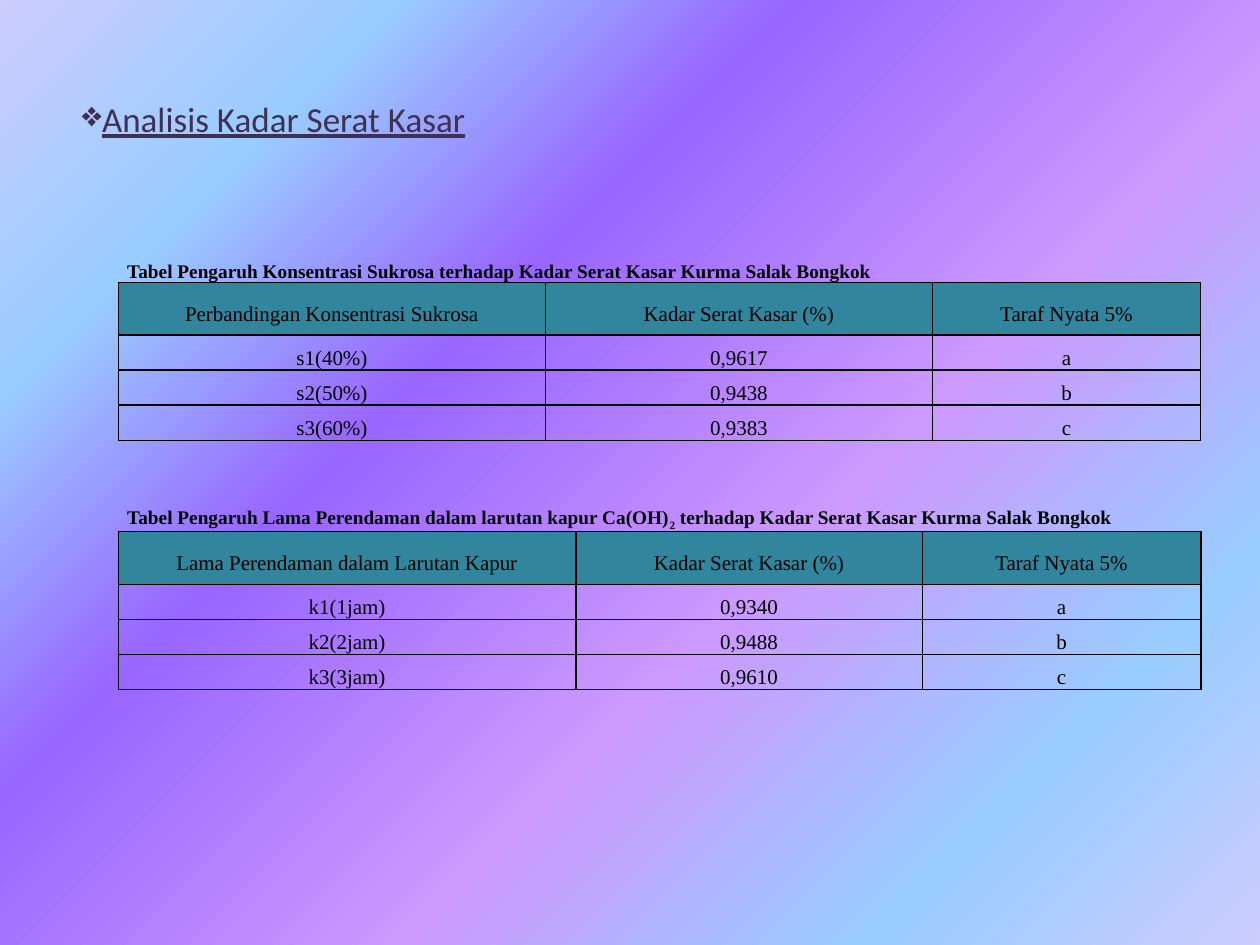
from lxml.etree import SubElement
from pptx import Presentation
from pptx.dml.color import RGBColor
from pptx.enum.text import MSO_ANCHOR, PP_ALIGN
from pptx.oxml import parse_xml
from pptx.oxml.ns import nsdecls, qn
from pptx.util import Inches, Pt

BLACK = RGBColor(0x00, 0x00, 0x00)
PLUM = RGBColor(0x40, 0x31, 0x52)
TEAL = RGBColor(0x31, 0x85, 0x9C)
STOPS = [(0, "CCCCFF"), (18, "99CCFF"), (36, "9966FF"),
         (61, "CC99FF"), (82, "99CCFF"), (100, "CCCCFF")]

SUGAR = {
    "top": 1.9,
    "widths": [3.39, 3.07, 2.13],
    "caption": [("Tabel Pengaruh Konsentrasi Sukrosa terhadap "
                 "Kadar Serat Kasar Kurma Salak Bongkok", 0)],
    "rows": [("Perbandingan Konsentrasi Sukrosa", "Kadar Serat Kasar (%)", "Taraf Nyata 5%"),
             ("s1(40%)", "0,9617", "a"),
             ("s2(50%)", "0,9438", "b"),
             ("s3(60%)", "0,9383", "c")],
}
SOAK = {
    "top": 3.83,
    "widths": [3.63, 2.75, 2.21],
    "caption": [("Tabel Pengaruh Lama Perendaman dalam larutan kapur Ca(OH)", 0),
                ("2", -25000),
                (" terhadap Kadar Serat Kasar Kurma Salak Bongkok", 0)],
    "rows": [("Lama Perendaman dalam Larutan Kapur", "Kadar Serat Kasar (%)", "Taraf Nyata 5%"),
             ("k1(1jam)", "0,9340", "a"),
             ("k2(2jam)", "0,9488", "b"),
             ("k3(3jam)", "0,9610", "c")],
}


def paint(slide):
    """Diagonal gradient background."""
    fill = slide.background.fill
    fill.gradient()
    fill.gradient_angle = 315  # counter-clockwise, so 45 degrees downwards
    grad = slide.background._cSld.find(".//" + qn("a:gsLst"))
    for stop in list(grad):
        grad.remove(stop)
    for pos, color in STOPS:
        grad.append(parse_xml(f'<a:gs {nsdecls("a")} pos="{pos * 1000}">'
                              f'<a:srgbClr val="{color}"/></a:gs>'))


def style(run, color=BLACK, **format):
    run.font.color.rgb = color
    for name, value in format.items():
        setattr(run.font, name, value)


def add_title(slide, text):
    title = slide.shapes.title
    place = {"left": 0.55, "top": 0.63, "width": 8.5, "height": 0.62}
    for name, value in place.items():
        setattr(title, name, Inches(value))
    title.text_frame.vertical_anchor = MSO_ANCHOR.MIDDLE
    para = title.text_frame.paragraphs[0]
    para.alignment = PP_ALIGN.LEFT
    run = para.add_run()
    run.text = text
    style(run, PLUM, name="Calibri", size=Pt(20), underline=True)
    props = para._p.get_or_add_pPr()
    props.set("marL", "0")
    props.set("indent", "0")
    SubElement(props, qn("a:buChar")).set("char", "❖")


def set_edges(cell, shown):
    """Draw the named sides in black and hide the others."""
    props = cell._tc.get_or_add_tcPr()
    for place, side in enumerate("LRTB"):
        paint = '<a:solidFill><a:srgbClr val="000000"/></a:solidFill>'
        if side not in shown:
            paint = "<a:noFill/>"
        props.insert(place, parse_xml(
            f'<a:ln{side} {nsdecls("a")} w="12700">{paint}</a:ln{side}>'))


def fill_cell(cell, parts, anchor, align, space, **format):
    cell.vertical_anchor = anchor
    cell.margin_left = cell.margin_right = Inches(0.07)
    cell.margin_top = cell.margin_bottom = 0
    para = cell.text_frame.paragraphs[0]
    para.alignment = align
    para.line_spacing = space
    for text, shift in parts:
        run = para.add_run()
        run.text = text
        style(run, name="Times New Roman", **format)
        if shift:
            run._r.get_or_add_rPr().set("baseline", str(shift))


def add_table(slide, data):
    widths, rows = data["widths"], data["rows"]
    frame = slide.shapes.add_table(len(rows) + 1, len(widths), Inches(0.94),
                                   Inches(data["top"]), Inches(sum(widths)), Inches(1.68))
    table = frame.table
    table.first_row = table.horz_banding = False
    for col, width in zip(table.columns, widths):
        col.width = Inches(width)
    for index, row in enumerate(table.rows):
        row.height = Inches(0.42 if index == 1 else 0.18)

    # Caption row
    first = table.cell(0, 0)
    first.merge(table.cell(0, len(widths) - 1))
    for cell in table.rows[0].cells:
        cell.fill.background()
        set_edges(cell, "B")
    fill_cell(first, data["caption"], MSO_ANCHOR.BOTTOM, PP_ALIGN.LEFT, 2.0,
              size=Pt(11), bold=True)

    # Header and values
    for r, values in enumerate(rows, 1):
        for c, value in enumerate(values):
            cell = table.cell(r, c)
            if r == 1:
                cell.fill.solid()
                cell.fill.fore_color.rgb = TEAL
            else:
                cell.fill.background()
            set_edges(cell, "LRTB")
            fill_cell(cell, [(value, 0)], MSO_ANCHOR.MIDDLE, PP_ALIGN.CENTER, 1.5,
                      size=Pt(12), bold=False)


def main():
    deck = Presentation()
    deck.slide_width, deck.slide_height = Inches(10), Inches(7.5)
    slide = deck.slides.add_slide(deck.slide_layouts[5])
    paint(slide)
    add_title(slide, "Analisis Kadar Serat Kasar")
    for data in (SUGAR, SOAK):
        add_table(slide, data)
    deck.save("out.pptx")


if __name__ == "__main__":
    main()
